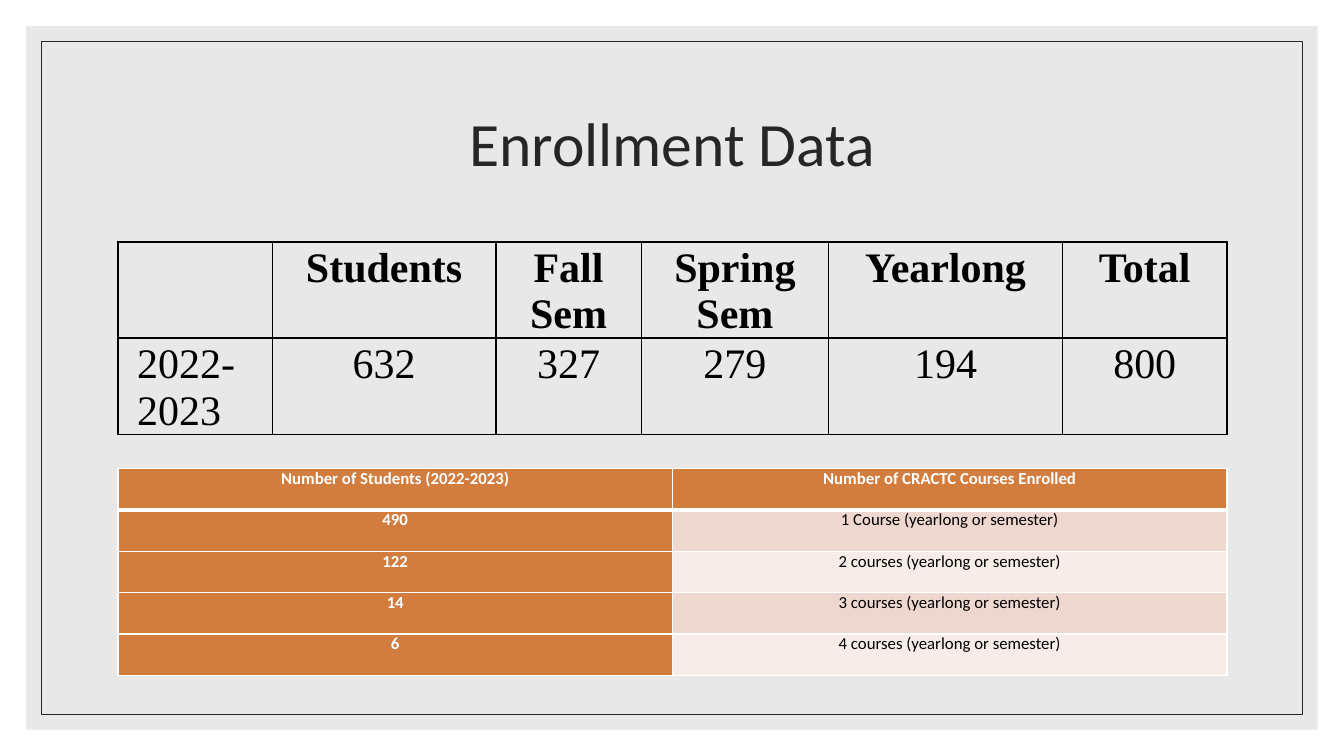
"""Build the enrollment data slide with its two tables."""
from lxml.etree import SubElement
from pptx import Presentation
from pptx.dml.color import RGBColor
from pptx.enum.shapes import MSO_SHAPE
from pptx.enum.text import MSO_ANCHOR, PP_ALIGN
from pptx.oxml.ns import qn
from pptx.util import Inches, Pt

WIDE, HIGH = 13.33, 7.5
LEFT, SPAN = 1.17, 11
TITLE = "Enrollment Data"
TERMS = [
    ["", "Students", "Fall Sem", "Spring Sem", "Yearlong", "Total"],
    ["2022-2023", "632", "327", "279", "194", "800"],
]
LOADS = [
    ["Number of Students (2022-2023)", "Number of CRACTC Courses Enrolled"],
    ["490", "1 Course (yearlong or semester)"],
    ["122", "2 courses (yearlong or semester)"],
    ["14", "3 courses (yearlong or semester)"],
    ["6", "4 courses (yearlong or semester)"],
]
COLS = [1.53, 2.22, 1.44, 1.86, 2.32, 1.63]
BLACK, WHITE, DARK = "000000", "FFFFFF", "262626"
ORANGE, BANDS = "D27D3E", ["F7ECE8", "EED7CE"]
FRAMES = [(0, WHITE, None), (0.26, "D9D9D9", None), (0.41, None, DARK)]


def paint(fill, tone):
    """Fill with a hex colour, or leave clear."""
    if tone:
        fill.solid()
        fill.fore_color.rgb = RGBColor.from_string(tone)
    else:
        fill.background()


def style(font, face, size, tone, bold=False):
    """Set the look of a font."""
    font.name, font.size, font.bold = face, Pt(size), bold
    font.color.rgb = RGBColor.from_string(tone)


def frame(inset, tone, edge):
    """Add a rectangle set in evenly from the slide edges."""
    box = slide.shapes.add_shape(
        MSO_SHAPE.RECTANGLE, Inches(inset), Inches(inset),
        Inches(WIDE - 2 * inset), Inches(HIGH - 2 * inset))
    box.shadow.inherit = False
    paint(box.fill, tone)
    paint(box.line.fill, edge)
    if edge:
        box.line.width = Pt(0.5)
    return box


def border(cell, tone, top=1, base=1):
    """Draw the four borders of a cell."""
    props = cell._tc.get_or_add_tcPr()
    for side, width in zip("LRTB", (1, 1, top, base)):
        line = SubElement(props, qn(f"a:ln{side}"), w=str(Pt(width)))
        fill = SubElement(line, qn("a:solidFill"))
        SubElement(fill, qn("a:srgbClr"), val=tone)


def grid(data, top, cols, row):
    """Add a plain table and return its cells by row."""
    table = slide.shapes.add_table(
        len(data), len(cols), Inches(LEFT), Inches(top),
        Inches(SPAN), Inches(row * len(data))).table
    table.first_row = table.horz_banding = False
    for col, width in zip(table.columns, cols):
        col.width = Inches(width)
    for line, words in zip(table.rows, data):
        line.height = Inches(row)
        for cell, text in zip(line.cells, words):
            cell.text_frame.text = text
            cell.text_frame.paragraphs[0].alignment = PP_ALIGN.CENTER
    return [list(line.cells) for line in table.rows]


def inset(cell, side, top):
    """Set the margins of a cell."""
    cell.margin_left = cell.margin_right = Inches(side)
    cell.margin_top, cell.margin_bottom = Inches(top), 0


deck = Presentation()
deck.slide_width, deck.slide_height = Inches(WIDE), Inches(HIGH)
slide = deck.slides.add_slide(deck.slide_layouts[5])
paint(slide.background.fill, WHITE)

boxes = [frame(*item) for item in FRAMES]
shade = boxes[1]._element.spPr.find(qn("a:solidFill"))[0]
SubElement(shade, qn("a:alpha"), val="60000")

title = slide.shapes.title
slide.shapes._spTree.append(title._element)
title.left, title.top = Inches(LEFT), Inches(0.7)
title.width, title.height = Inches(SPAN), Inches(1.5)
title.text_frame.text = TITLE
title.text_frame.vertical_anchor = MSO_ANCHOR.MIDDLE
head = title.text_frame.paragraphs[0]
head.alignment, head.line_spacing = PP_ALIGN.CENTER, 0.9
style(head.runs[0].font, "Calibri", 44, DARK)

terms = grid(TERMS, 2.4, COLS, 0.95)
for r, line in enumerate(terms):
    for cell in line:
        inset(cell, 0.19, 0.03)
        border(cell, BLACK)
        paint(cell.fill, None)
        for run in cell.text_frame.paragraphs[0].runs:
            style(run.font, "Times New Roman", 30, BLACK, r == 0)
terms[1][0].text_frame.paragraphs[0].alignment = PP_ALIGN.LEFT

for r, line in enumerate(grid(LOADS, 4.65, [SPAN / 2] * 2, 0.41)):
    for c, cell in enumerate(line):
        key = r == 0 or c == 0
        inset(cell, 0.07, 0)
        border(cell, WHITE, 3 if r == 1 else 1, 3 if r == 0 else 1)
        paint(cell.fill, ORANGE if key else BANDS[r % 2])
        style(cell.text_frame.paragraphs[0].runs[0].font, "Calibri", 12,
              WHITE if key else BLACK, key)

deck.save("out.pptx")
